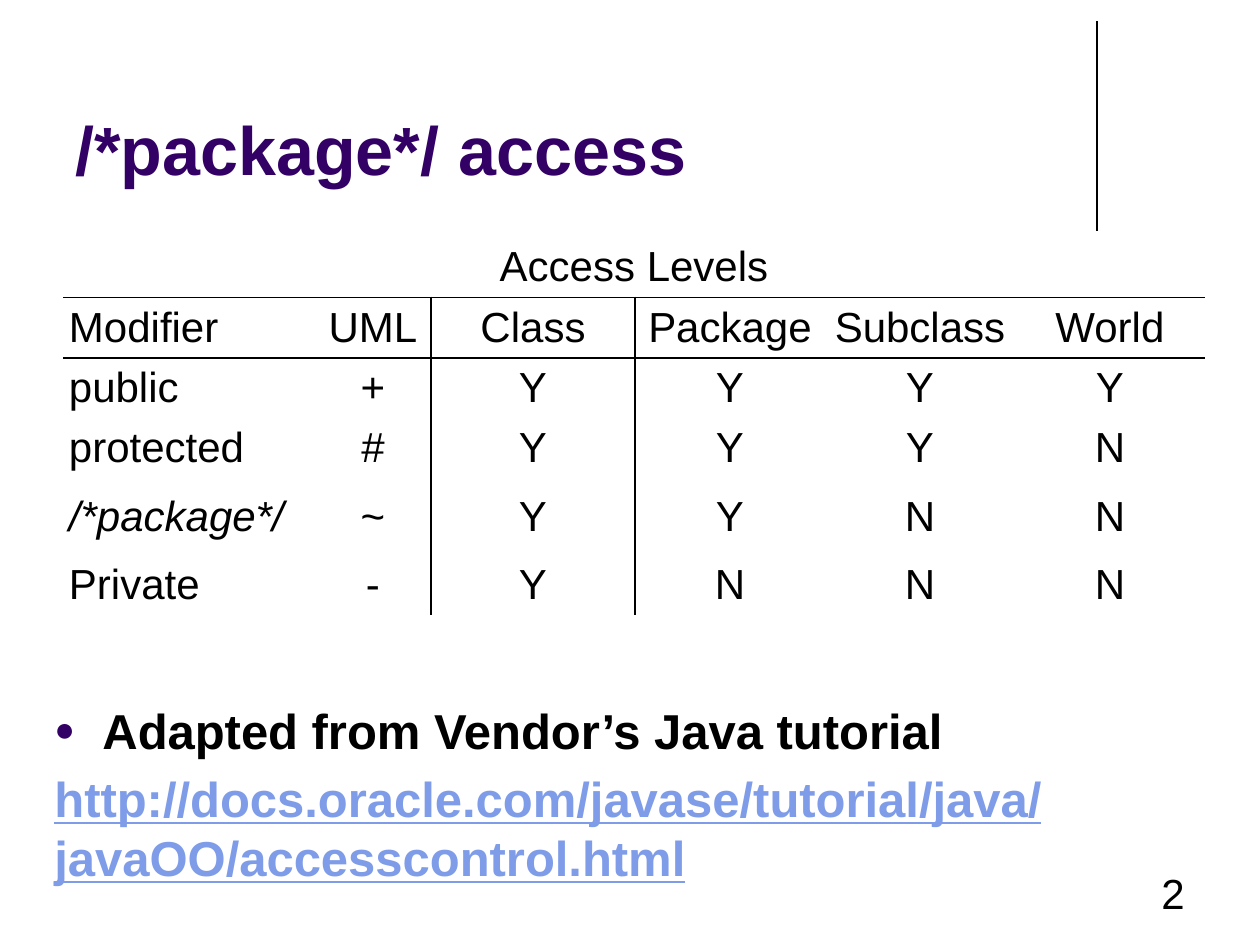
from dataclasses import dataclass

from lxml import etree
from pptx import Presentation, util as u
from pptx.dml.color import RGBColor
from pptx.enum import shapes, text
from pptx.oxml import ns

PX = 914400 / 126
FONT = "Arial"
BLACK, PURPLE, LINK = "000000", "330066", "7E9CE8"
NO_STYLE = "{2D5ABB26-0587-4C30-8999-92F81FD0307C}"
LEFT, CENTER, RIGHT = text.PP_ALIGN.LEFT, text.PP_ALIGN.CENTER, text.PP_ALIGN.RIGHT

COLUMNS = [252, 116, 204, 190, 190, 190]
ROWS = [59, 60, 59, 60, 76, 60]
ACCESS = [
    ["Modifier", "UML", "Class", "Package", "Subclass", "World"],
    ["public", "+", "Y", "Y", "Y", "Y"],
    ["protected", "#", "Y", "Y", "Y", "N"],
    ["/*package*/", "~", "Y", "Y", "N", "N"],
    ["Private", "-", "Y", "N", "N", "N"],
]


@dataclass
class Line:
    words: str
    size: int
    color: str = BLACK
    bold: bool = False
    italic: bool = False
    underline: bool = False
    align: text.PP_ALIGN = LEFT
    bullet: bool = False
    space_before: float = 0


@dataclass
class Block:
    left: int
    top: int
    width: int
    height: int
    lines: list[Line]
    anchor: text.MSO_ANCHOR = text.MSO_ANCHOR.TOP


BLOCKS = [
    Block(63, 16, 1040, 179, [Line("/*package*/ access", 39, PURPLE, bold=True)],
          text.MSO_ANCHOR.BOTTOM),
    Block(42, 694, 1155, 251, [
        Line("Adapted from Vendor’s Java tutorial", 28, bold=True, bullet=True),
        Line("http://docs.oracle.com/javase/tutorial/java/javaOO/accesscontrol.html",
             28, LINK, bold=True, underline=True, space_before=5.6),
    ]),
    Block(903, 861, 294, 63, [Line("2", 24, align=RIGHT)]),
]


def px(length: int) -> u.Emu:
    return u.Emu(round(length * PX))


def rgb(color: str) -> RGBColor:
    return RGBColor.from_string(color)


def apply(target, **values) -> None:
    for name, value in values.items():
        setattr(target, name, value)


def add_bullet(para) -> None:
    """Give the paragraph a small purple dot and a hanging indent."""
    props = para._p.get_or_add_pPr()
    props.set("marL", str(px(48)))
    props.set("indent", str(px(-48)))
    color = etree.SubElement(props, ns.qn("a:buClr"))
    etree.SubElement(color, ns.qn("a:srgbClr"), val=PURPLE)
    etree.SubElement(props, ns.qn("a:buSzPct"), val="70000")
    etree.SubElement(props, ns.qn("a:buFont"), typeface=FONT)
    etree.SubElement(props, ns.qn("a:buChar"), char="●")


def write_line(para, line: Line) -> None:
    if line.bullet:
        add_bullet(para)
    para.alignment = line.align
    if line.space_before:
        para.space_before = u.Pt(line.space_before)
    span = para.add_run()
    span.text = line.words
    apply(span.font, name=FONT, size=u.Pt(line.size), bold=line.bold,
          italic=line.italic, underline=line.underline)
    span.font.color.rgb = rgb(line.color)


def add_block(page, block: Block) -> None:
    box = page.shapes.add_textbox(px(block.left), px(block.top),
                                  px(block.width), px(block.height))
    frame = box.text_frame
    apply(frame, word_wrap=True, vertical_anchor=block.anchor)
    for index, line in enumerate(block.lines):
        para = frame.add_paragraph() if index else frame.paragraphs[0]
        write_line(para, line)


def add_border(cell, side: str) -> None:
    """Draw a 1 pt black border; call in the order L, R, T, B, before any fill."""
    border = etree.SubElement(cell._tc.get_or_add_tcPr(), ns.qn(f"a:ln{side}"),
                              w=str(u.Pt(1)))
    fill = etree.SubElement(border, ns.qn("a:solidFill"))
    etree.SubElement(fill, ns.qn("a:srgbClr"), val=BLACK)


def fill_cell(cell, line: Line, sides: str) -> None:
    apply(cell, margin_left=px(6), margin_right=px(6), margin_top=px(5),
          margin_bottom=px(5), vertical_anchor=text.MSO_ANCHOR.MIDDLE)
    for side in sides:
        add_border(cell, side)
    cell.fill.background()
    write_line(cell.text_frame.paragraphs[0], line)


def add_access_table(page) -> None:
    frame = page.shapes.add_table(len(ROWS), len(COLUMNS), px(63), px(237),
                                  px(sum(COLUMNS)), px(sum(ROWS)))
    table = frame.table
    apply(table, first_row=False, horz_banding=False)
    table._tbl.tblPr.find(ns.qn("a:tableStyleId")).text = NO_STYLE
    for column, width in zip(table.columns, COLUMNS):
        column.width = px(width)
    for row, height in zip(table.rows, ROWS):
        row.height = px(height)

    heading = table.cell(0, 0)
    heading.merge(table.cell(0, len(COLUMNS) - 1))
    fill_cell(heading, Line("Access Levels", 24, align=CENTER), "B")
    for row, values in enumerate(ACCESS, start=1):
        for column, value in enumerate(values):
            sides = {1: "R", 2: "L"}.get(column, "") + ("T" if row == 1 else "")
            line = Line(value, 24, italic=value == "/*package*/",
                        align=CENTER if column else LEFT)
            fill_cell(table.cell(row, column), line, sides)


def add_rule(page, x: int, top: int, bottom: int) -> None:
    rule = page.shapes.add_connector(shapes.MSO_CONNECTOR.STRAIGHT,
                                     px(x), px(top), px(x), px(bottom))
    rule.line.color.rgb = rgb(BLACK)
    rule.line.width = u.Pt(0.75)
    etree.SubElement(rule._element.spPr, ns.qn("a:effectLst"))


def main() -> None:
    deck = Presentation()
    apply(deck, slide_width=px(1260), slide_height=px(945))
    page = deck.slides.add_slide(deck.slide_layouts[6])
    add_rule(page, 1097, 21, 231)
    title, source, number = BLOCKS
    add_block(page, title)
    add_access_table(page)
    add_block(page, source)
    add_block(page, number)
    deck.save("out.pptx")


if __name__ == "__main__":
    main()
